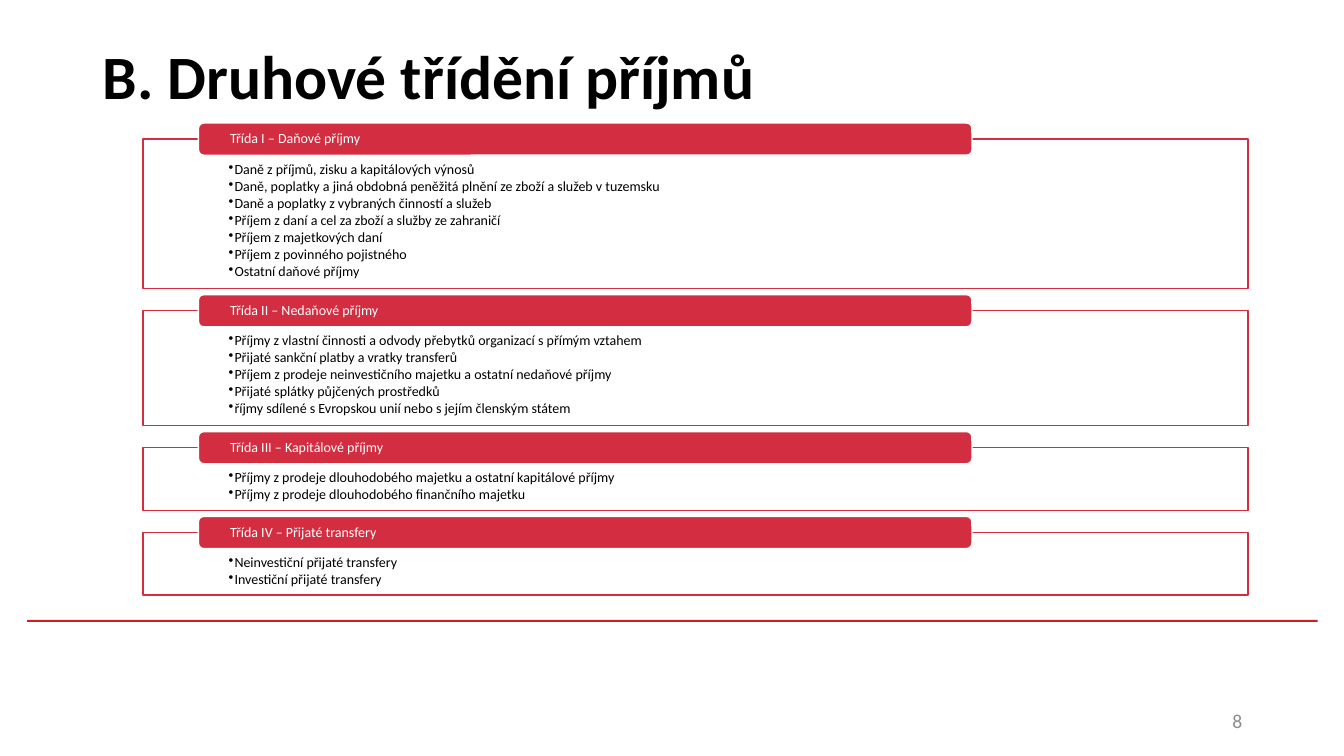
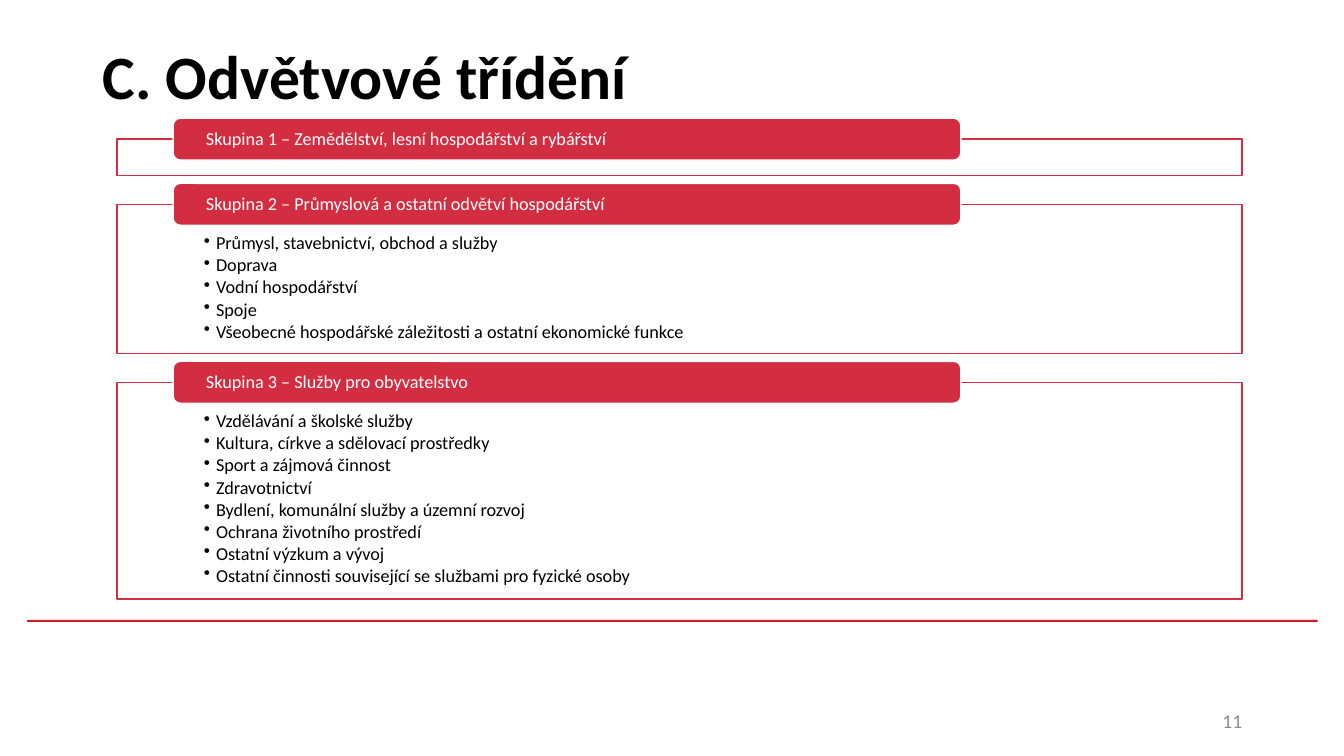
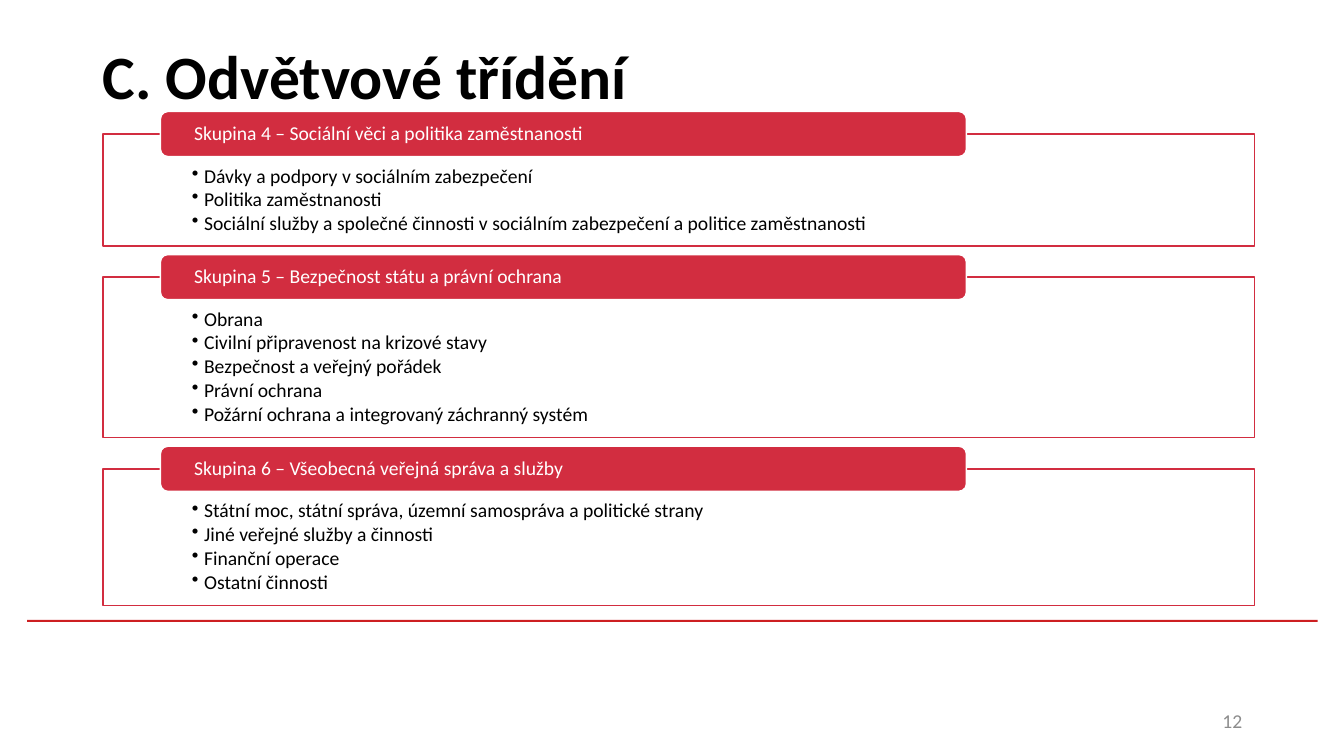
import pptx
import pptx.dml.color
import pptx.enum.shapes
import pptx.enum.text
import pptx.oxml
import pptx.oxml.ns
import pptx.util

Inches = pptx.util.Inches
Align = pptx.enum.text.PP_ALIGN
Anchor = pptx.enum.text.MSO_ANCHOR
Shape = pptx.enum.shapes.MSO_SHAPE

RED = "D22D40"
RULE_RED = "CD1F21"
WHITE = "FFFFFF"
BLACK = "000000"
GREY = "8C8C8C"


def color(value):
    return pptx.dml.color.RGBColor.from_string(value)


class Deck:
    font = "Calibri"

    def __init__(self):
        self.deck = pptx.Presentation()
        self.deck.slide_width = Inches(13.33)
        self.deck.slide_height = Inches(7.5)

    def format(self, para, size, tint, bold=False, align=Align.LEFT):
        para.alignment = align
        for span in para.runs:
            span.font.name = self.font
            span.font.size = pptx.util.Pt(size)
            span.font.bold = bold
            span.font.color.rgb = color(tint)

    def add_page(self, title, number):
        self.page = self.deck.slides.add_slide(self.deck.slide_layouts[5])
        self.add_box(Shape.RECTANGLE, 0.27, 6.15, 12.8, 0.02, RULE_RED)
        self.add_title(title)
        self.add_number(number)

    def add_title(self, text):
        box = self.page.shapes.title
        box.left, box.top = Inches(0.92), Inches(0.02)
        box.width, box.height = Inches(11.5), Inches(1.45)
        frame = box.text_frame
        frame.text = text
        frame.auto_size = pptx.enum.text.MSO_AUTO_SIZE.NONE
        frame.vertical_anchor = Anchor.MIDDLE
        self.format(frame.paragraphs[0], 44, BLACK, bold=True)

    def add_number(self, number):
        box = self.page.shapes.add_textbox(Inches(9.42), Inches(6.95), Inches(3), Inches(0.4))
        frame = box.text_frame
        frame.word_wrap = True
        frame.vertical_anchor = Anchor.MIDDLE
        frame.text = str(number)
        self.format(frame.paragraphs[0], 14, GREY, align=Align.RIGHT)

    def add_box(self, kind, left, top, width, height, fill, line=None):
        box = self.page.shapes.add_shape(
            kind, Inches(left), Inches(top), Inches(width), Inches(height))
        box.shadow.inherit = False
        box.fill.solid()
        box.fill.fore_color.rgb = color(fill)
        if line:
            box.line.color.rgb = color(line)
            box.line.width = pptx.util.Pt(1)
        else:
            box.line.fill.background()
        return box

    def set_frame(self, box, side, top, bottom, anchor):
        frame = box.text_frame
        frame.word_wrap = True
        frame.vertical_anchor = anchor
        frame.margin_left = frame.margin_right = Inches(side)
        frame.margin_top, frame.margin_bottom = Inches(top), Inches(bottom)
        return frame

    def add_bullets(self, frame, items, size, indent):
        frame.text = "\n".join(items)
        for para in frame.paragraphs:
            properties = para._p.get_or_add_pPr()
            properties.set("marL", str(Inches(indent)))
            properties.set("indent", str(-Inches(indent)))
            properties.append(pptx.oxml.parse_xml(
                f'<a:buChar {pptx.oxml.ns.nsdecls("a")} char="•"/>'))
            para.line_spacing = 0.9
            para.space_after = pptx.util.Pt(0.13 * size)
            self.format(para, size, BLACK)

    def add_panel(self, left, top, width, size, indent, heading, items):
        em = size / 72
        height = (2 + 1.24 * len(items)) * em
        band_height = 2.3 * em
        band_offset = 0.05 * width
        text_offset = 0.08 * width - 0.03
        panel = self.add_box(Shape.RECTANGLE, left, top, width, height, WHITE, RED)
        if items:
            frame = self.set_frame(panel, text_offset, 1.64 * em, 0.57 * em, Anchor.TOP)
            self.add_bullets(frame, items, size, indent)
        band = self.add_box(Shape.ROUNDED_RECTANGLE, left + band_offset, top - band_height / 2,
                            0.7 * width, band_height, RED, WHITE)
        frame = self.set_frame(band, text_offset - band_offset, 0, 0, Anchor.MIDDLE)
        frame.text = heading
        frame.paragraphs[0].line_spacing = 0.9
        self.format(frame.paragraphs[0], size, WHITE)
        return height

    def add_panels(self, left, top, width, size, indent, groups):
        for heading, items in groups:
            height = self.add_panel(left, top, width, size, indent, heading, items)
            top += height + 1.58 * size / 72


INCOME_CLASSES = [
    ("Třída I – Daňové příjmy", [
        "Daně z příjmů, zisku a kapitálových výnosů",
        "Daně, poplatky a jiná obdobná peněžitá plnění ze zboží a služeb v tuzemsku",
        "Daně a poplatky z vybraných činností a služeb",
        "Příjem z daní a cel za zboží a služby ze zahraničí",
        "Příjem z majetkových daní",
        "Příjem z povinného pojistného",
        "Ostatní daňové příjmy"]),
    ("Třída II – Nedaňové příjmy", [
        "Příjmy z vlastní činnosti a odvody přebytků organizací s přímým vztahem",
        "Přijaté sankční platby a vratky transferů",
        "Příjem z prodeje neinvestičního majetku a ostatní nedaňové příjmy",
        "Přijaté splátky půjčených prostředků",
        "říjmy sdílené s Evropskou unií nebo s jejím členským státem"]),
    ("Třída III – Kapitálové příjmy", [
        "Příjmy z prodeje dlouhodobého majetku a ostatní kapitálové příjmy",
        "Příjmy z prodeje dlouhodobého finančního majetku"]),
    ("Třída IV – Přijaté transfery", [
        "Neinvestiční přijaté transfery",
        "Investiční přijaté transfery"]),
]

SECTORS_1_TO_3 = [
    ("Skupina 1 – Zemědělství, lesní hospodářství a rybářství", []),
    ("Skupina 2 – Průmyslová a ostatní odvětví hospodářství", [
        "Průmysl, stavebnictví, obchod a služby",
        "Doprava",
        "Vodní hospodářství",
        "Spoje",
        "Všeobecné hospodářské záležitosti a ostatní ekonomické funkce"]),
    ("Skupina 3 – Služby pro obyvatelstvo", [
        "Vzdělávání a školské služby",
        "Kultura, církve a sdělovací prostředky",
        "Sport a zájmová činnost",
        "Zdravotnictví",
        "Bydlení, komunální služby a územní rozvoj",
        "Ochrana životního prostředí",
        "Ostatní výzkum a vývoj",
        "Ostatní činnosti související se službami pro fyzické osoby"]),
]

SECTORS_4_TO_6 = [
    ("Skupina 4 – Sociální věci a politika zaměstnanosti", [
        "Dávky a podpory v sociálním zabezpečení",
        "Politika zaměstnanosti",
        "Sociální služby a společné činnosti v sociálním zabezpečení a politice zaměstnanosti"]),
    ("Skupina 5 – Bezpečnost státu a právní ochrana", [
        "Obrana",
        "Civilní připravenost na krizové stavy",
        "Bezpečnost a veřejný pořádek",
        "Právní ochrana",
        "Požární ochrana a integrovaný záchranný systém"]),
    ("Skupina 6 – Všeobecná veřejná správa a služby", [
        "Státní moc, státní správa, územní samospráva a politické strany",
        "Jiné veřejné služby a činnosti",
        "Finanční operace",
        "Ostatní činnosti"]),
]


def main():
    deck = Deck()
    deck.add_page("B. Druhové třídění příjmů", 8)
    deck.add_panels(1.42, 1.38, 10.96, 10, 0.06, INCOME_CLASSES)
    deck.add_page("C. Odvětvové třídění", 11)
    deck.add_panels(1.16, 1.38, 11.16, 13, 0.12, SECTORS_1_TO_3)
    deck.add_page("C. Odvětvové třídění", 12)
    deck.add_panels(1.02, 1.33, 11.42, 14, 0.12, SECTORS_4_TO_6)
    deck.deck.save("out.pptx")


if __name__ == "__main__":
    main()
